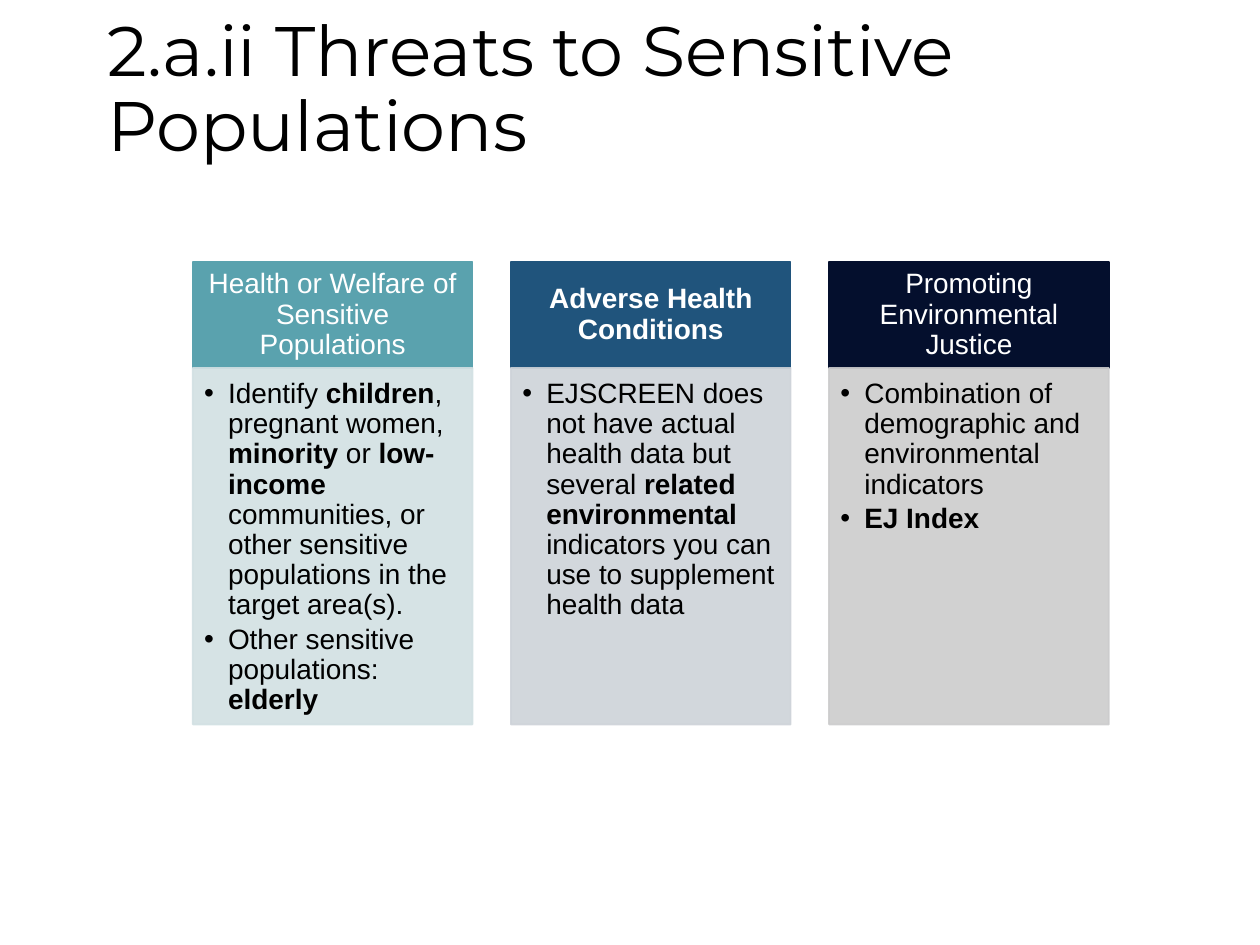
from dataclasses import dataclass

from lxml.etree import SubElement
from pptx import Presentation
from pptx.dml.color import RGBColor
from pptx.enum.shapes import MSO_SHAPE as Shape
from pptx.enum.text import MSO_ANCHOR as Anchor, PP_ALIGN as Align
from pptx.oxml.ns import qn
from pptx.util import Inches, Pt

# Column grid, in inches
LEFT, PITCH, WIDTH = 1.53, 2.525, 2.22
HEADER_TOP, HEADER_HEIGHT, BODY_HEIGHT = 2.08, 0.84, 2.83
HEADER_MARGINS = (0.12, 0.07, 0.12, 0.07)
BODY_MARGINS = (0.09, 0.09, 0.12, 0.14)
BULLET_INDENT = 0.19

Run = tuple[str, bool]  # text, bold


@dataclass
class Column:
    header: Run
    header_color: str
    body_color: str
    bullets: list[list[Run]]


COLUMNS = [
    Column(("Health or Welfare of Sensitive Populations", False), "5AA2AE", "D2E0E3", [
        [("Identify ", False), ("children", True), (", pregnant women, ", False),
         ("minority", True), (" or ", False), ("low-income ", True),
         ("communities, or other sensitive populations in the target area(s).", False)],
        [("Other sensitive populations: ", False), ("elderly", True)],
    ]),
    Column(("Adverse Health Conditions", True), "20547C", "CED3D9", [
        [("EJSCREEN does not have actual health data but several ", False),
         ("related environmental ", True),
         ("indicators you can use to supplement health data", False)],
    ]),
    Column(("Promoting Environmental Justice", False), "040F2D", "CCCCCD", [
        [("Combination of demographic and environmental indicators", False)],
        [("EJ Index", True)],
    ]),
]


def rgb(color: str) -> RGBColor:
    return RGBColor.from_string(color)


def apply(target, values: dict) -> None:
    for name, value in values.items():
        setattr(target, name, value)


def set_opacity(fill_parent, percent: int) -> None:
    color = fill_parent.find(qn("a:solidFill"))[0]
    SubElement(color, qn("a:alpha"), val=str(percent * 1000))


def add_box(slide, box: tuple, color: str, margins: tuple, anchor, opacity: int = 100):
    shape = slide.shapes.add_shape(Shape.RECTANGLE, *map(Inches, box))
    shape.shadow.inherit = False
    shape.fill.solid()
    shape.fill.fore_color.rgb = rgb(color)
    shape.line.color.rgb = rgb(color)
    shape.line.width = Pt(1)
    if opacity < 100:
        properties = shape.fill._xPr
        set_opacity(properties, opacity)
        set_opacity(properties.find(qn("a:ln")), opacity)
    sides = ("margin_left", "margin_top", "margin_right", "margin_bottom")
    frame = shape.text_frame
    apply(frame, dict(zip(sides, map(Inches, margins))))
    apply(frame, {"word_wrap": True, "vertical_anchor": anchor})
    return frame


def add_runs(paragraph, runs: list[Run], color: str, size: int = 16,
             font: str = "Arial") -> None:
    paragraph.line_spacing = 0.9
    for text, bold in runs:
        run = paragraph.add_run()
        run.text = text
        apply(run.font, {"name": font, "size": Pt(size), "bold": bold})
        run.font.color.rgb = rgb(color)


def add_bullet(paragraph) -> None:
    properties = paragraph._p.get_or_add_pPr()
    properties.set("marL", str(Inches(BULLET_INDENT)))
    properties.set("indent", str(-Inches(BULLET_INDENT)))
    SubElement(properties, qn("a:buFont"), typeface="Arial")
    SubElement(properties, qn("a:buChar"), char="•")


def add_column(slide, column: Column, index: int) -> None:
    left = LEFT + index * PITCH
    # Header
    frame = add_box(slide, (left, HEADER_TOP, WIDTH, HEADER_HEIGHT),
                    column.header_color, HEADER_MARGINS, Anchor.MIDDLE)
    frame.paragraphs[0].alignment = Align.CENTER
    add_runs(frame.paragraphs[0], [column.header], "FFFFFF")
    # Body
    frame = add_box(slide, (left, HEADER_TOP + HEADER_HEIGHT, WIDTH, BODY_HEIGHT),
                    column.body_color, BODY_MARGINS, Anchor.TOP, opacity=90)
    for number, runs in enumerate(column.bullets):
        paragraph = frame.add_paragraph() if number else frame.paragraphs[0]
        add_bullet(paragraph)
        apply(paragraph, {"alignment": Align.LEFT, "space_after": Pt(2.5)})
        add_runs(paragraph, runs, "000000")


def add_title(slide, text: str) -> None:
    title = slide.shapes.title
    apply(title, {"left": Inches(0.75), "top": 0,
                  "width": Inches(8.62), "height": Inches(1.45)})
    apply(title.text_frame, {"word_wrap": True, "vertical_anchor": Anchor.MIDDLE})
    paragraph = title.text_frame.paragraphs[0]
    paragraph.alignment = Align.LEFT
    add_runs(paragraph, [(text, False)], "000000", 40, "Montserrat")


def main() -> None:
    presentation = Presentation()
    apply(presentation, {"slide_width": Inches(10), "slide_height": Inches(7.5)})
    slide = presentation.slides.add_slide(presentation.slide_layouts[5])
    add_title(slide, "2.a.ii Threats to Sensitive Populations")
    for index, column in enumerate(COLUMNS):
        add_column(slide, column, index)
    presentation.save("out.pptx")


if __name__ == "__main__":
    main()
